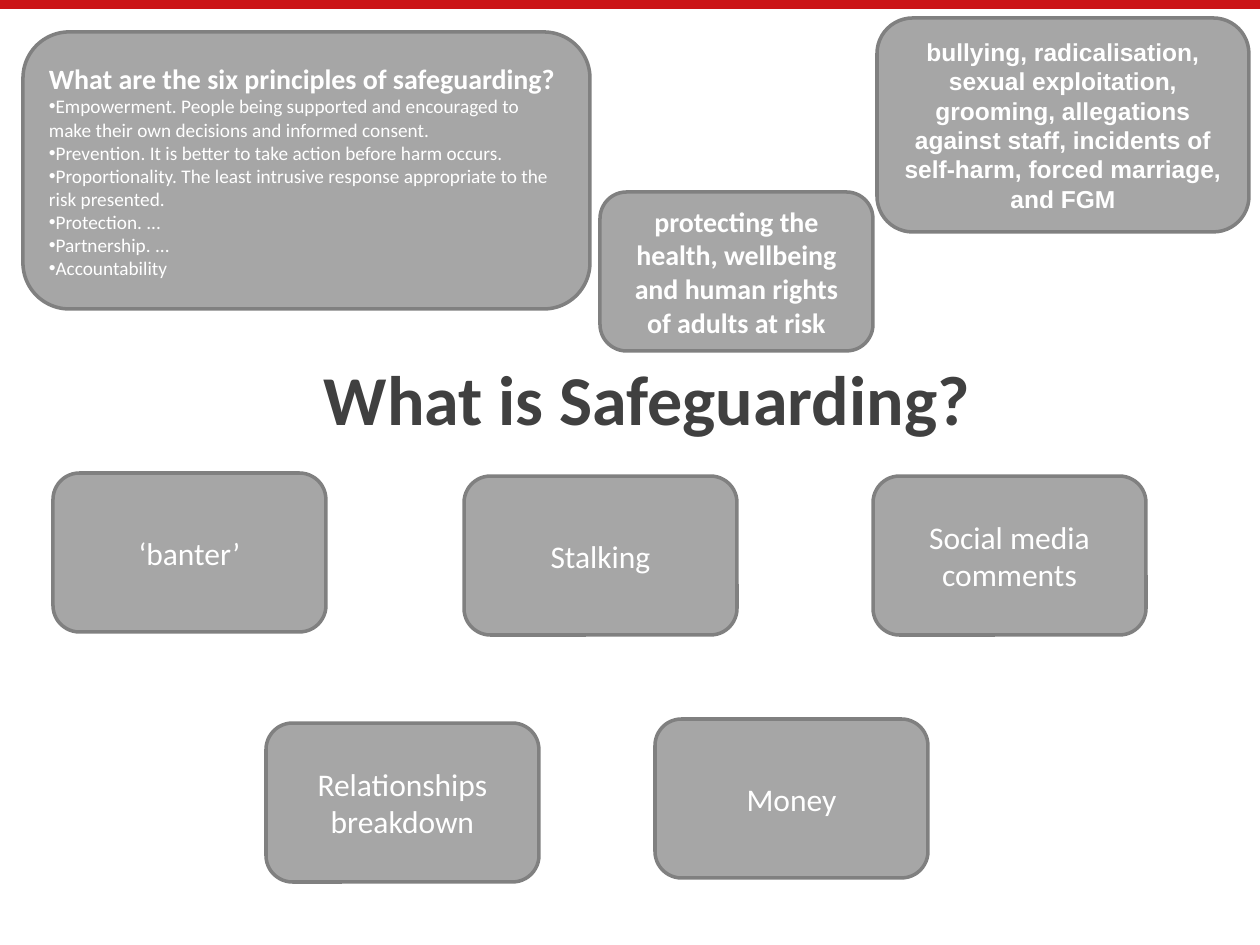
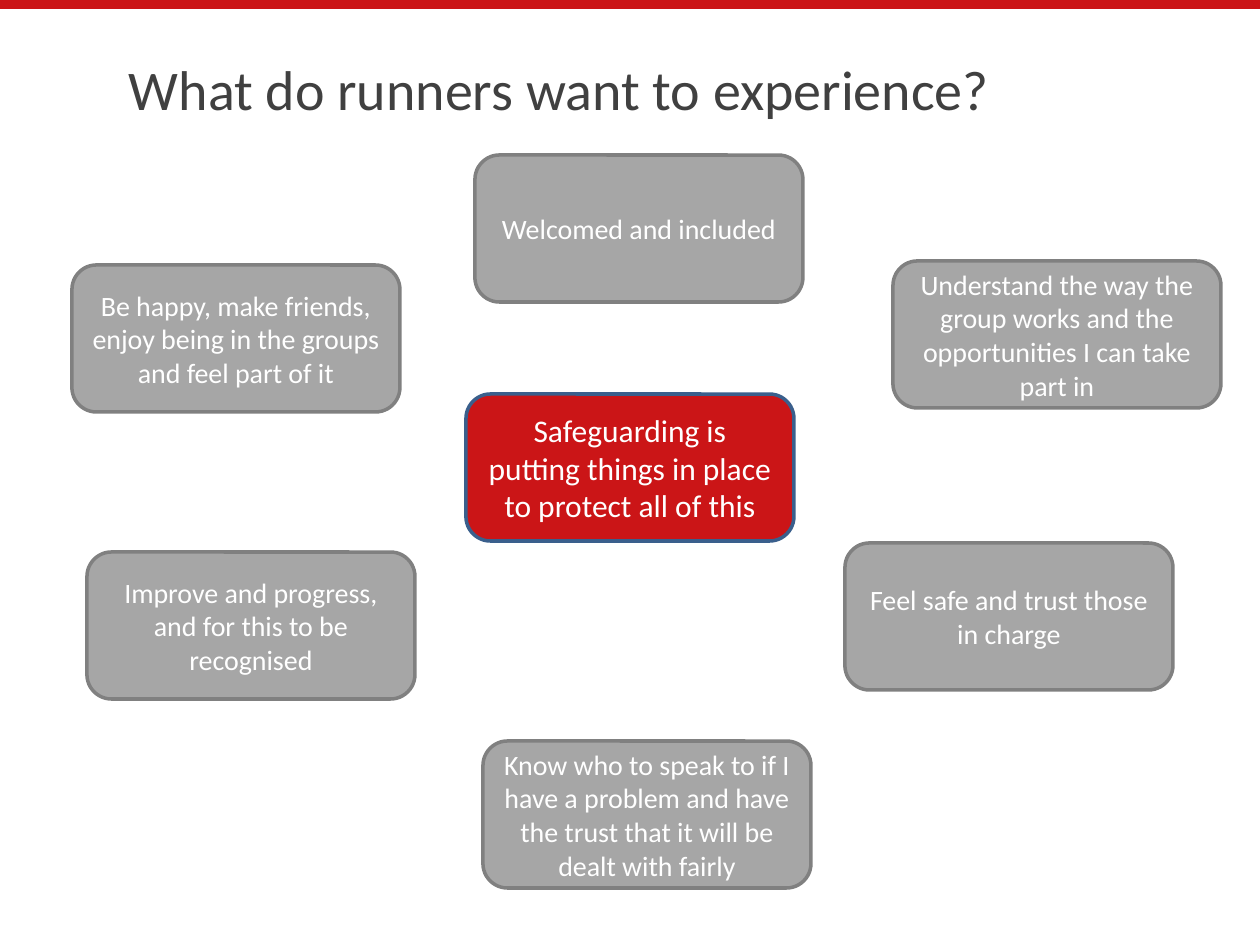
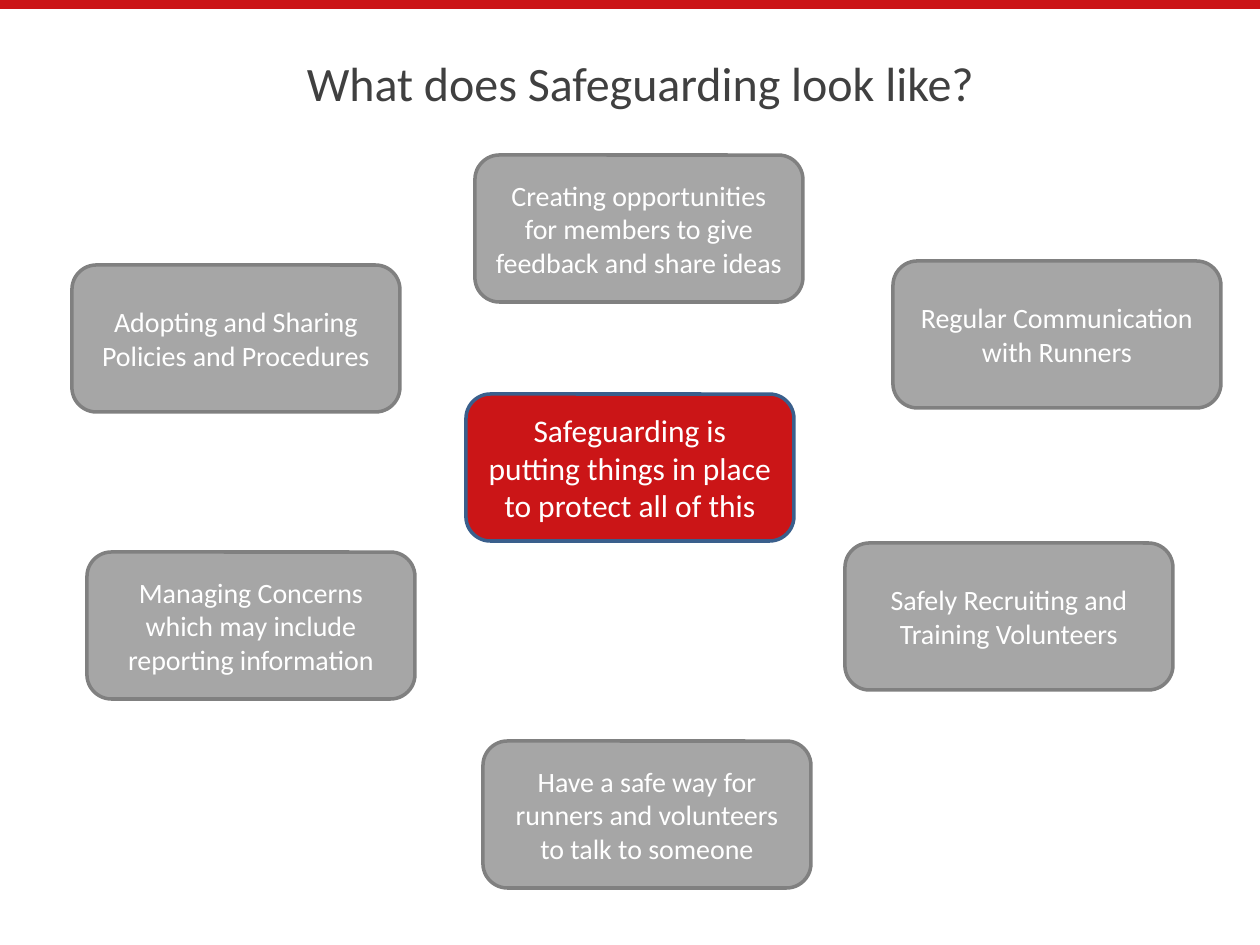
"""Build three safeguarding slides for running groups."""
from dataclasses import dataclass

from lxml import etree
from pptx import Presentation
from pptx import util as u
from pptx.dml.color import RGBColor
from pptx.enum import shapes, text
from pptx.oxml import ns


@dataclass(frozen=True)
class Theme:
    red: RGBColor = RGBColor(0xCB, 0x15, 0x17)
    blue: RGBColor = RGBColor(0x3A, 0x5F, 0x8C)
    grey: RGBColor = RGBColor(0xA6, 0xA6, 0xA6)
    edge: RGBColor = RGBColor(0x80, 0x80, 0x80)
    ink: RGBColor = RGBColor(0x40, 0x40, 0x40)
    white: RGBColor = RGBColor(0xFF, 0xFF, 0xFF)
    font: str = "Calibri"
    alt_font: str = "Arial"
    headline: float = 40
    question: float = 32
    question_small: float = 27.4
    large: float = 18
    medium: float = 16
    note: float = 14
    bullet: float = 11


theme = Theme()
SCALE = 914400 / 126
CENTER, LEFT = text.PP_ALIGN.CENTER, text.PP_ALIGN.LEFT


def place(*lengths):
    return [u.Emu(round(length * SCALE)) for length in lengths]


def write(para, words, size, color=theme.white, bold=False, font=theme.font, align=CENTER):
    para.text = words
    para.alignment = align
    para.font.name = font
    para.font.size = u.Pt(size)
    para.font.bold = bold
    para.font.color.rgb = color


deck = Presentation()
deck.slide_width, deck.slide_height = place(1260, 945)

titles = [
    ("What is Safeguarding?", (87, 204, 1120, 635), theme.headline, True, 152),
    ("What do runners want to experience?", (72, 48, 975, 122), theme.question, False, 6),
    ("What does Safeguarding look like?", (241, 48, 798, 122), theme.question_small, False, 6),
]
pages = []
for words, area, size, bold, inset in titles:
    page = deck.slides.add_slide(deck.slide_layouts[5])
    title = page.shapes.title
    title.left, title.top, title.width, title.height = place(*area)
    frame = title.text_frame
    frame.auto_size = text.MSO_AUTO_SIZE.NONE
    frame.vertical_anchor = text.MSO_ANCHOR.TOP
    frame.margin_top = place(inset)[0]
    write(frame.paragraphs[0], words, size, theme.ink, bold)
    pages.append(page)

band = pages[0].shapes.add_shape(shapes.MSO_SHAPE.RECTANGLE, *place(0, 0, 1260, 9))
band.shadow.inherit = False
band.fill.solid()
band.fill.fore_color.rgb = theme.red
band.line.fill.background()
band.element.nvSpPr.cNvPr.set("id", "20")
deck.slide_master.shapes.element.append(band.element)

topic = (273, 159)
plain = dict(size=theme.large)
strong = dict(size=theme.medium, bold=True)
cards = [
    (0, (873, 476, *topic), "Social media comments", plain),
    (0, (464, 476, *topic), "Stalking", plain),
    (0, (266, 723, *topic), "Relationships breakdown", plain),
    (0, (53, 473, *topic), "‘banter’", plain),
    (0, (877, 18, 372, 214),
     "bullying, radicalisation, sexual exploitation, grooming, allegations against staff, "
     "incidents of self-harm, forced marriage, and FGM",
     dict(size=theme.note, bold=True, font=theme.alt_font)),
    (0, (23, 32, 567, 277), "What are the six principles of safeguarding?",
     dict(strong, align=LEFT)),
    (0, (600, 192, *topic),
     "protecting the health, wellbeing and human rights of adults at risk", strong),
    (0, (655, 719, *topic), "Money", plain),
]
principles = [
    "Empowerment. People being supported and encouraged to make their own decisions "
    "and informed consent.",
    "Prevention. It is better to take action before harm occurs.",
    "Proportionality. The least intrusive response appropriate to the risk presented.",
    "Protection. ...",
    "Partnership. ...",
    "Accountability",
]

core = "Safeguarding is putting things in place to protect all of this"
spots = [(72, 265), (466, 394), (87, 552), (483, 741), (845, 543), (475, 155), (893, 261)]
wishes = [
    "Be happy, make friends, enjoy being in the groups and feel part of it",
    core,
    "Improve and progress, and for this to be recognised",
    "Know who to speak to if I have a problem and have the trust that it will be "
    "dealt with fairly",
    "Feel safe and trust those in charge",
    "Welcomed and included",
    "Understand the way the group works and the opportunities I can take part in",
]
actions = [
    "Adopting and Sharing Policies and Procedures",
    core,
    "Managing Concerns which may include reporting information",
    "Have a safe way for runners and volunteers to talk to someone",
    "Safely Recruiting and Training Volunteers",
    "Creating opportunities for members to give feedback and share ideas",
    "Regular Communication with Runners",
]
for number, ring in enumerate([wishes, actions], start=1):
    for spot, words in zip(spots, ring):
        size = theme.large if words == core else theme.medium
        cards.append((number, (*spot, 328, 147), words, dict(size=size)))

for number, area, words, style in cards:
    card = pages[number].shapes.add_shape(shapes.MSO_SHAPE.ROUNDED_RECTANGLE, *place(*area))
    card.shadow.inherit = False
    card.fill.solid()
    card.fill.fore_color.rgb = theme.red if words == core else theme.grey
    card.line.color.rgb = theme.blue if words == core else theme.edge
    card.line.width = u.Pt(2)
    frame = card.text_frame
    frame.word_wrap = True
    frame.vertical_anchor = text.MSO_ANCHOR.MIDDLE
    write(frame.paragraphs[0], words, **style)
    if style.get("align") == LEFT:
        for principle in principles:
            para = frame.add_paragraph()
            props = para._p.get_or_add_pPr()
            props.set("marL", "0")
            props.set("indent", "0")
            etree.SubElement(props, ns.qn("a:buFont"), typeface=theme.alt_font)
            etree.SubElement(props, ns.qn("a:buChar"), char="•")
            write(para, principle, theme.bullet, align=LEFT)

deck.save("out.pptx")
